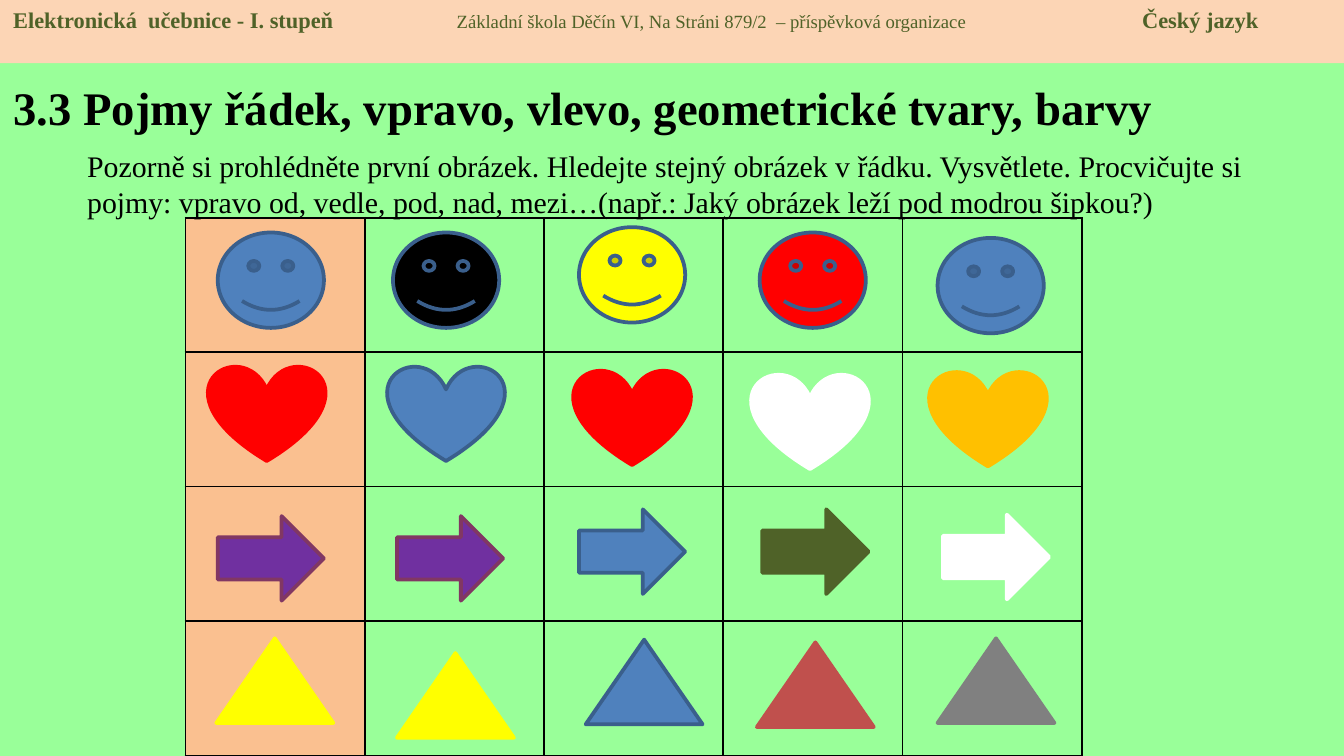
from lxml.etree import SubElement
from pptx import Presentation
from pptx.dml.color import RGBColor
from pptx.enum.shapes import MSO_SHAPE
from pptx.enum.text import MSO_ANCHOR, PP_ALIGN
from pptx.oxml.ns import qn
from pptx.util import Emu, Inches, Pt

FONT = "Times New Roman"
BLACK = RGBColor(0x00, 0x00, 0x00)
WHITE = RGBColor(0xFF, 0xFF, 0xFF)
MINT = RGBColor(0x99, 0xFF, 0x99)
PEACH = RGBColor(0xFC, 0xD5, 0xB5)
ORANGE = RGBColor(0xFA, 0xC0, 0x90)
OLIVE = RGBColor(0x4F, 0x62, 0x28)
BLUE = RGBColor(0x4F, 0x81, 0xBD)
NAVY = RGBColor(0x3A, 0x5F, 0x8C)
RED = RGBColor(0xFF, 0x00, 0x00)
YELLOW = RGBColor(0xFF, 0xFF, 0x00)
AMBER = RGBColor(0xFF, 0xC0, 0x00)
PURPLE = RGBColor(0x70, 0x30, 0xA0)
PLUM = RGBColor(0x81, 0x37, 0x63)
BRICK = RGBColor(0xC0, 0x50, 0x4D)
GREY = RGBColor(0x80, 0x80, 0x80)

# Grid of pictures, in inches
GRID_LEFT, GRID_TOP = 1.38, 1.62
COLUMNS, ROWS = 5, 4
COLUMN_WIDTH, ROW_HEIGHT = 6.67 / COLUMNS, 1

# Each row: shape, width, height, then (offset x, offset y, fill, line) per cell
PICTURE_ROWS = [
    (MSO_SHAPE.SMILEY_FACE, 0.79, 0.71, [
        (0.24, 0.11, BLUE, NAVY), (0.21, 0.11, BLACK, NAVY),
        (0.26, 0.07, YELLOW, NAVY), (0.27, 0.11, RED, NAVY),
        (0.26, 0.15, BLUE, NAVY)]),
    (MSO_SHAPE.HEART, 0.87, 0.71, [
        (0.17, 0.10, RED, RED), (0.17, 0.10, BLUE, NAVY),
        (0.22, 0.13, RED, RED), (0.21, 0.16, WHITE, WHITE),
        (0.20, 0.14, AMBER, AMBER)]),
    (MSO_SHAPE.RIGHT_ARROW, 0.79, 0.63, [
        (0.24, 0.22, PURPLE, PLUM), (0.24, 0.22, PURPLE, PLUM),
        (0.26, 0.17, BLUE, NAVY), (0.29, 0.17, OLIVE, OLIVE),
        (0.30, 0.21, WHITE, WHITE)]),
    (MSO_SHAPE.ISOSCELES_TRIANGLE, 0.87, 0.63, [
        (0.23, 0.13, YELLOW, YELLOW), (0.24, 0.24, YELLOW, YELLOW),
        (0.31, 0.14, BLUE, NAVY), (0.25, 0.16, BRICK, BRICK),
        (0.26, 0.13, GREY, GREY)]),
]


def set_font(font, size, color, bold=False):
    font.name = FONT
    font.size = Pt(size)
    font.bold = bold
    font.color.rgb = color


def add_shape(slide, kind, left, top, width, height, fill, line=None):
    shape = slide.shapes.add_shape(
        kind, Inches(left), Inches(top), Inches(width), Inches(height))
    shape.shadow.inherit = False
    shape.fill.solid()
    shape.fill.fore_color.rgb = fill
    if line is None:
        shape.line.fill.background()
    else:
        shape.line.color.rgb = line
        shape.line.width = Pt(2)
    return shape


def add_header(slide):
    header = add_shape(slide, MSO_SHAPE.RECTANGLE, 0, 0, 10, 0.47, PEACH)
    header.text_frame.vertical_anchor = MSO_ANCHOR.TOP
    paragraph = header.text_frame.paragraphs[0]
    paragraph.alignment = PP_ALIGN.LEFT
    # Tab stops for the school and the subject
    tabs = SubElement(paragraph._p.get_or_add_pPr(), qn("a:tabLst"))
    for position in (3.3, 8.4):
        SubElement(tabs, qn("a:tab"), pos=str(Inches(position)), algn="l")
    for text, size, bold in [
        ("Elektronická  učebnice - I. stupeň\t", 12, True),
        ("Základní škola Děčín VI, Na Stráni 879/2  – příspěvková organizace\t", 10, False),
        ("Český jazyk", 12, True),
    ]:
        run = paragraph.add_run()
        run.text = text
        set_font(run.font, size, OLIVE, bold)


def format_title(title, text):
    title.left, title.top = Inches(0), Inches(0.47)
    title.width, title.height = Inches(10), Inches(0.65)
    title.text_frame.text = text
    title.text_frame.vertical_anchor = MSO_ANCHOR.MIDDLE
    paragraph = title.text_frame.paragraphs[0]
    paragraph.alignment = PP_ALIGN.LEFT
    set_font(paragraph.font, 25, BLACK, True)


def add_borders(cell):
    properties = cell._tc.get_or_add_tcPr()
    for side in ("a:lnL", "a:lnR", "a:lnT", "a:lnB"):
        border = SubElement(properties, qn(side), w=str(Pt(1)))
        fill = SubElement(border, qn("a:solidFill"))
        SubElement(fill, qn("a:srgbClr"), val=str(BLACK))


def add_grid(slide):
    table = slide.shapes.add_table(
        ROWS, COLUMNS, Inches(GRID_LEFT), Inches(GRID_TOP),
        Inches(COLUMN_WIDTH * COLUMNS), Inches(ROW_HEIGHT * ROWS)).table
    table.first_row = table.horz_banding = False
    for row in table.rows:
        for index, cell in enumerate(row.cells):
            add_borders(cell)
            if index == 0:
                cell.fill.solid()
                cell.fill.fore_color.rgb = ORANGE
            else:
                cell.fill.background()


def add_pictures(slide):
    for row, (kind, width, height, pictures) in enumerate(PICTURE_ROWS):
        for column, (x, y, fill, line) in enumerate(pictures):
            add_shape(slide, kind, GRID_LEFT + column * COLUMN_WIDTH + x,
                      GRID_TOP + row * ROW_HEIGHT + y, width, height, fill, line)


def add_instruction(slide, text):
    box = slide.shapes.add_textbox(
        Inches(0.55), Inches(1.05), Inches(9.25), Inches(0.64))
    box.text_frame.word_wrap = True
    box.text_frame.text = text
    set_font(box.text_frame.paragraphs[0].font, 16, BLACK)


def main():
    presentation = Presentation()
    presentation.slide_width = Inches(10)
    presentation.slide_height = Emu(5143500)
    slide = presentation.slides.add_slide(presentation.slide_layouts[5])
    slide.background.fill.solid()
    slide.background.fill.fore_color.rgb = MINT

    format_title(slide.shapes.title,
                 "3.3 Pojmy řádek, vpravo, vlevo, geometrické tvary, barvy")
    add_header(slide)
    add_grid(slide)
    add_pictures(slide)
    add_instruction(
        slide,
        "Pozorně si prohlédněte první obrázek. Hledejte stejný obrázek v řádku. "
        "Vysvětlete. Procvičujte si pojmy: vpravo od, vedle, pod, nad, "
        "mezi…(např.: Jaký obrázek leží pod modrou šipkou?)")
    presentation.save("out.pptx")


if __name__ == "__main__":
    main()
